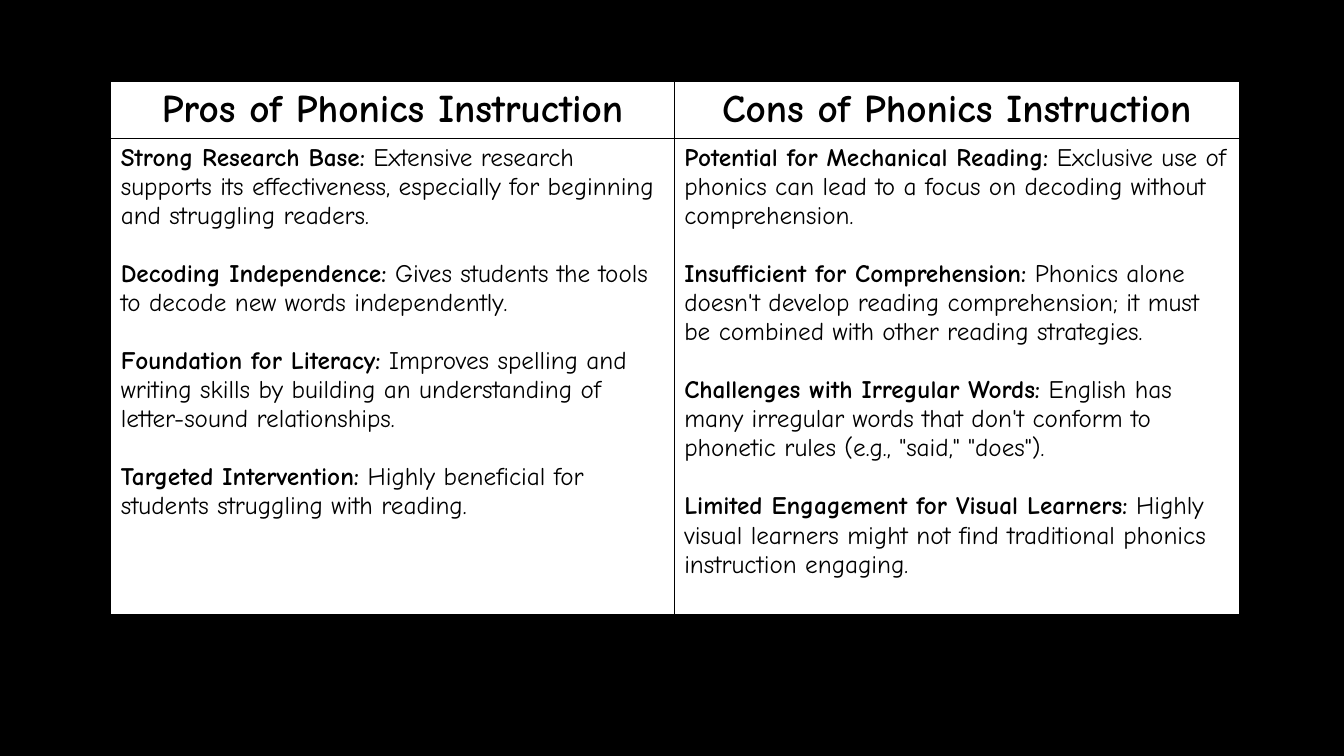
from dataclasses import dataclass

from lxml.etree import SubElement
from pptx import Presentation
from pptx.dml.color import RGBColor
from pptx.enum.text import PP_ALIGN
from pptx.oxml.ns import qn
from pptx.util import Cm, Pt


@dataclass(frozen=True)
class Theme:
    """Colours, font and type sizes of the slide."""
    black: str = "000000"
    white: str = "FFFFFF"
    font: str = "Comic Neue"
    head: float = 28
    body: float = 18
    gap: float = 20.7
    line: float = 1


THEME = Theme()

PROS = [
    ("Strong Research Base:", "Extensive research supports its effectiveness, "
     "especially for beginning and struggling readers."),
    ("Decoding Independence:", "Gives students the tools to decode new words "
     "independently."),
    ("Foundation for Literacy:", "Improves spelling and writing skills by building "
     "an understanding of letter-sound relationships."),
    ("Targeted Intervention:", "Highly beneficial for students struggling with "
     "reading."),
]
CONS = [
    ("Potential for Mechanical Reading:", "Exclusive use of phonics can lead to a "
     "focus on decoding without comprehension."),
    ("Insufficient for Comprehension:", "Phonics alone doesn't develop reading "
     "comprehension; it must be combined with other reading strategies."),
    ("Challenges with Irregular Words:", "English has many irregular words that "
     "don't conform to phonetic rules (e.g., \"said,\" \"does\")."),
    ("Limited Engagement for Visual Learners:", "Highly visual learners might not "
     "find traditional phonics instruction engaging."),
]
COLUMNS = [("Pros of Phonics Instruction", PROS), ("Cons of Phonics Instruction", CONS)]


def add_text(p, text, size=THEME.body, bold=False, color=THEME.black):
    """Add a formatted run to a paragraph."""
    r = p.add_run()
    r.text = text
    r.font.name = THEME.font
    r.font.size = Pt(size)
    r.font.bold = bold
    r.font.color.rgb = RGBColor.from_string(color)


def style_cell(cell):
    """Give a cell black borders and a white fill."""
    tc_pr = cell._tc.get_or_add_tcPr()
    for side in ("lnL", "lnR", "lnT", "lnB"):
        ln = SubElement(tc_pr, qn(f"a:{side}"), w=str(Pt(THEME.line)))
        fill = SubElement(ln, qn("a:solidFill"))
        SubElement(fill, qn("a:srgbClr"), val=THEME.black)
    cell.fill.solid()
    cell.fill.fore_color.rgb = RGBColor.from_string(THEME.white)


def fill_points(tf, points):
    """Write one spaced paragraph for each label and its explanation."""
    for i, (label, detail) in enumerate(points):
        p = tf.paragraphs[0] if i == 0 else tf.add_paragraph()
        if i:
            p.space_before = Pt(THEME.gap)
        add_text(p, label, bold=True)
        add_text(p, f" {detail}")


def add_comparison(s, left, top, widths, heights):
    """Place the table of pros and cons in the given box."""
    table = s.shapes.add_table(len(heights), len(widths), left, top,
                               sum(widths), sum(heights)).table
    for row, height in zip(table.rows, heights):
        row.height = height
    for i, (title, points) in enumerate(COLUMNS):
        table.columns[i].width = widths[i]
        head, body = table.cell(0, i), table.cell(1, i)
        style_cell(head)
        style_cell(body)
        p = head.text_frame.paragraphs[0]
        p.alignment = PP_ALIGN.CENTER
        add_text(p, title, size=THEME.head, bold=True)
        fill_points(body.text_frame, points)


def main():
    """Build and save the slide."""
    prs = Presentation()
    prs.slide_width, prs.slide_height = Cm(33.87), Cm(19.05)
    s = prs.slides.add_slide(prs.slide_layouts[6])
    s.background.fill.solid()
    s.background.fill.fore_color.rgb = RGBColor.from_string(THEME.black)
    add_comparison(s, Cm(2.79), Cm(2.06), [Cm(14.2), Cm(14.24)], [Cm(1.43), Cm(12)])
    prs.save("out.pptx")


if __name__ == "__main__":
    main()
